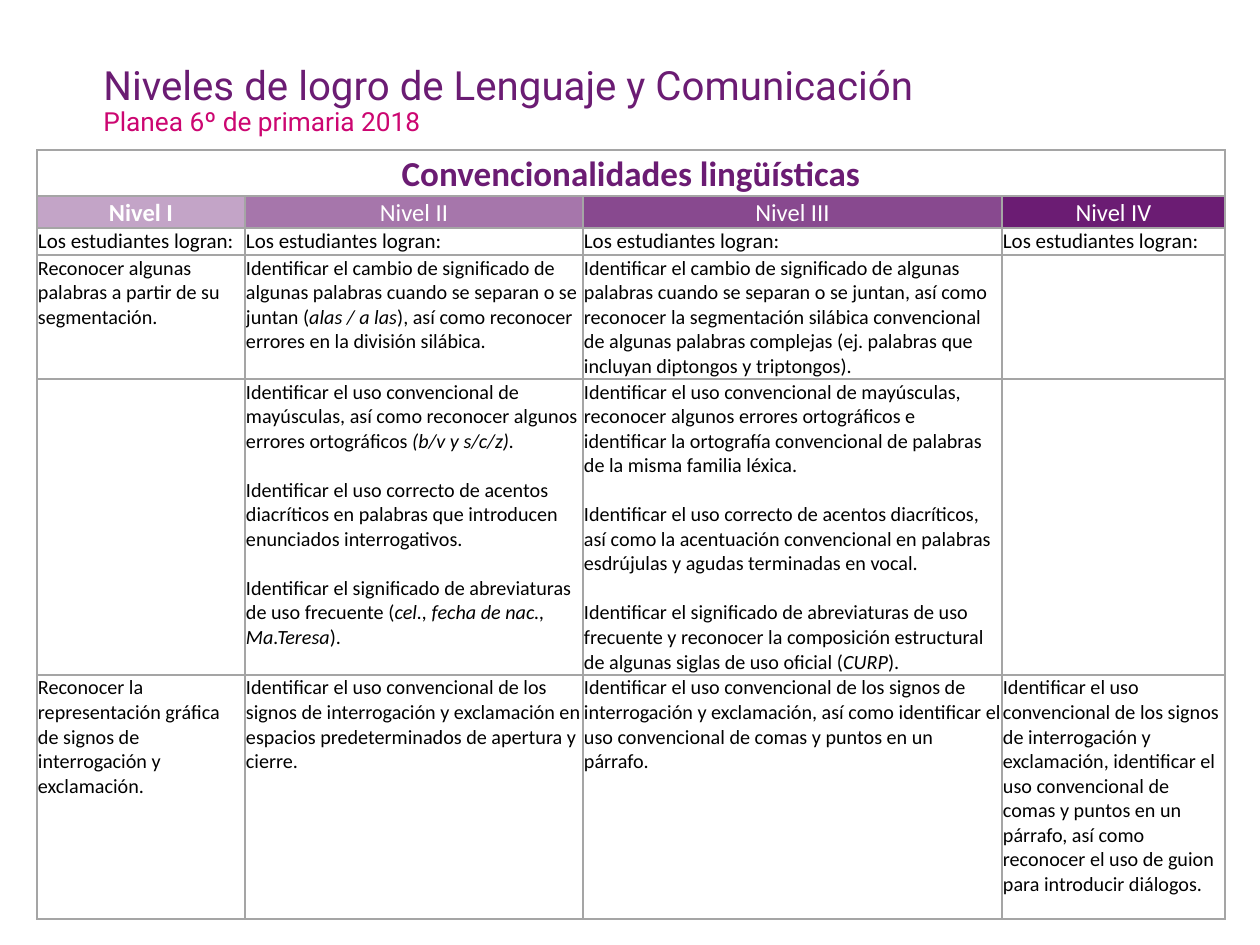
from dataclasses import dataclass

from lxml.etree import SubElement
from pptx import Presentation
from pptx.dml.color import RGBColor
from pptx.enum.text import MSO_ANCHOR, PP_ALIGN
from pptx.oxml import parse_xml
from pptx.oxml.ns import nsdecls, qn
from pptx.util import Pt

SCALE = 914400 / 126


@dataclass(frozen=True)
class Theme:
    """Colours, fonts and type sizes of the slide."""
    purple: str = "6B1C73"
    pink: str = "CC0671"
    white: str = "FFFFFF"
    black: str = "000000"
    rule: str = "A5A5A5"
    head: str = "Roboto"
    body: str = "Calibri"
    title: float = 23
    sub: float = 15
    band: float = 20
    level: float = 14
    lead: float = 12
    text: float = 11.5
    gap: float = 14


THEME = Theme()
LEAD = "Los estudiantes logran:"
LEVELS = [("Nivel I", 40), ("Nivel II", 60), ("Nivel III", 80), ("Nivel IV", 100)]
COLS = [208, 338, 419, 223]
ROWS = [46, 32, 27, 124, 296, 244]
BODY = [
    [
        ["Reconocer algunas palabras a partir de su segmentación."],
        ["Identificar el cambio de significado de algunas palabras cuando se separan o se "
         "juntan (*alas / a las*), así como reconocer errores en la división silábica."],
        ["Identificar el cambio de significado de algunas palabras cuando se separan o se "
         "juntan, así como reconocer la segmentación silábica convencional de algunas "
         "palabras complejas (ej. palabras que incluyan diptongos y triptongos)."],
        [],
    ],
    [
        [],
        ["Identificar el uso convencional de mayúsculas, así como reconocer algunos "
         "errores ortográficos *(b/v y s/c/z).*",
         "Identificar el uso correcto de acentos diacríticos en palabras que introducen "
         "enunciados interrogativos.",
         "Identificar el significado de abreviaturas de uso frecuente "
         "(*cel., fecha de nac., Ma.Teresa*)."],
        ["Identificar el uso convencional de mayúsculas, reconocer algunos errores "
         "ortográficos e identificar la ortografía convencional de palabras de la misma "
         "familia léxica.",
         "Identificar el uso correcto de acentos diacríticos, así como la acentuación "
         "convencional en palabras esdrújulas y agudas terminadas en vocal.",
         "Identificar el significado de abreviaturas de uso frecuente y reconocer la "
         "composición estructural de algunas siglas de uso oficial (*CURP*)."],
        [],
    ],
    [
        ["Reconocer la representación gráfica de signos de interrogación y exclamación."],
        ["Identificar el uso convencional de los signos de interrogación y exclamación en "
         "espacios predeterminados de apertura y cierre."],
        ["Identificar el uso convencional de los signos de interrogación y exclamación, así "
         "como identificar el uso convencional de comas y puntos en un párrafo."],
        ["Identificar el uso convencional de los signos de interrogación y exclamación, "
         "identificar el uso convencional de comas y puntos en un párrafo, así como "
         "reconocer el uso de guion para introducir diálogos."],
    ],
]


def px(num):
    """Turn px into EMU."""
    return round(num * SCALE)


def style(item, values):
    """Set each attribute named in a dict."""
    for name, value in values.items():
        setattr(item, name, value)


def write(frame, paras, color, font, form=None):
    """Fill a text frame, with italics between asterisks."""
    for num, text in enumerate(paras):
        para = frame.add_paragraph() if num else frame.paragraphs[0]
        style(para, form or {})
        if num:
            para.space_before = Pt(THEME.gap)
        for turn, part in enumerate(text.split("*")):
            if part:
                run = para.add_run()
                run.text = part
                style(run.font, {"italic": turn % 2 == 1, **font})
                run.font.color.rgb = RGBColor.from_string(color)


def heading(slide, left, top, width):
    """Place the title and the subtitle."""
    lines = [
        ("Niveles de logro de Lenguaje y Comunicación", 0, 67, THEME.title,
         THEME.purple, 0.9, MSO_ANCHOR.MIDDLE),
        ("Planea 6º de primaria 2018", 39, 98, THEME.sub,
         THEME.pink, 1.2, MSO_ANCHOR.TOP),
    ]
    for text, down, height, size, color, space, anchor in lines:
        box = slide.shapes.add_textbox(px(left), px(top + down), px(width), px(height))
        style(box.text_frame, {"word_wrap": True, "vertical_anchor": anchor})
        write(box.text_frame, [text], color,
              {"name": THEME.head, "size": Pt(size)}, {"line_spacing": space})


def paint(cell, color, alpha=100):
    """Give a cell its fill and its four borders."""
    cell.fill.solid()
    cell.fill.fore_color.rgb = RGBColor.from_string(color)
    props = cell._tc.get_or_add_tcPr()
    if alpha < 100:
        tint = props.find(".//" + qn("a:srgbClr"))
        SubElement(tint, qn("a:alpha")).set("val", str(alpha * 1000))
    for num, side in enumerate("LRTB"):
        props.insert(num, parse_xml(
            f'<a:ln{side} {nsdecls("a")} w="12700"><a:solidFill>'
            f'<a:srgbClr val="{THEME.rule}"/></a:solidFill></a:ln{side}>'))


def fill(cell, paras, size, color=THEME.black, back=THEME.white, alpha=100,
         bold=False, head=False):
    """Write and paint one table cell."""
    side, top = (6, 0) if head else (1, 1)
    style(cell, {"margin_left": px(side), "margin_right": px(side),
                 "margin_top": px(top), "margin_bottom": 0})
    form = {"alignment": PP_ALIGN.CENTER, "line_spacing": 1.07} if head else {}
    font = {"name": THEME.body, "size": Pt(size), "bold": bold}
    write(cell.text_frame, paras, color, font, form)
    paint(cell, back, alpha)


def grid(slide, left, top):
    """Place the table of levels."""
    table = slide.shapes.add_table(len(ROWS), len(COLS), px(left), px(top),
                                   px(sum(COLS)), px(sum(ROWS))).table
    style(table, {"first_row": False, "horz_banding": False})
    for col, width in zip(table.columns, COLS):
        col.width = px(width)
    for row, height in zip(table.rows, ROWS):
        row.height = px(height)
    table.cell(0, 0).merge(table.cell(0, len(COLS) - 1))
    fill(table.cell(0, 0), ["Convencionalidades lingüísticas"], THEME.band,
         THEME.purple, bold=True, head=True)
    for num, (name, alpha) in enumerate(LEVELS):
        if num:
            paint(table.cell(0, num), THEME.white)
        fill(table.cell(1, num), [name], THEME.level, THEME.white, THEME.purple,
             alpha, bold=num == 0, head=True)
        fill(table.cell(2, num), [LEAD], THEME.lead)
        for down, row in enumerate(BODY, 3):
            fill(table.cell(down, num), row[num], THEME.text)


def main():
    """Build and save the slide."""
    deck = Presentation()
    style(deck, {"slide_width": px(1260), "slide_height": px(945)})
    slide = deck.slides.add_slide(deck.slide_layouts[6])
    heading(slide, 91, 54, 1086)
    grid(slide, 37, 150)
    deck.save("out.pptx")


if __name__ == "__main__":
    main()
